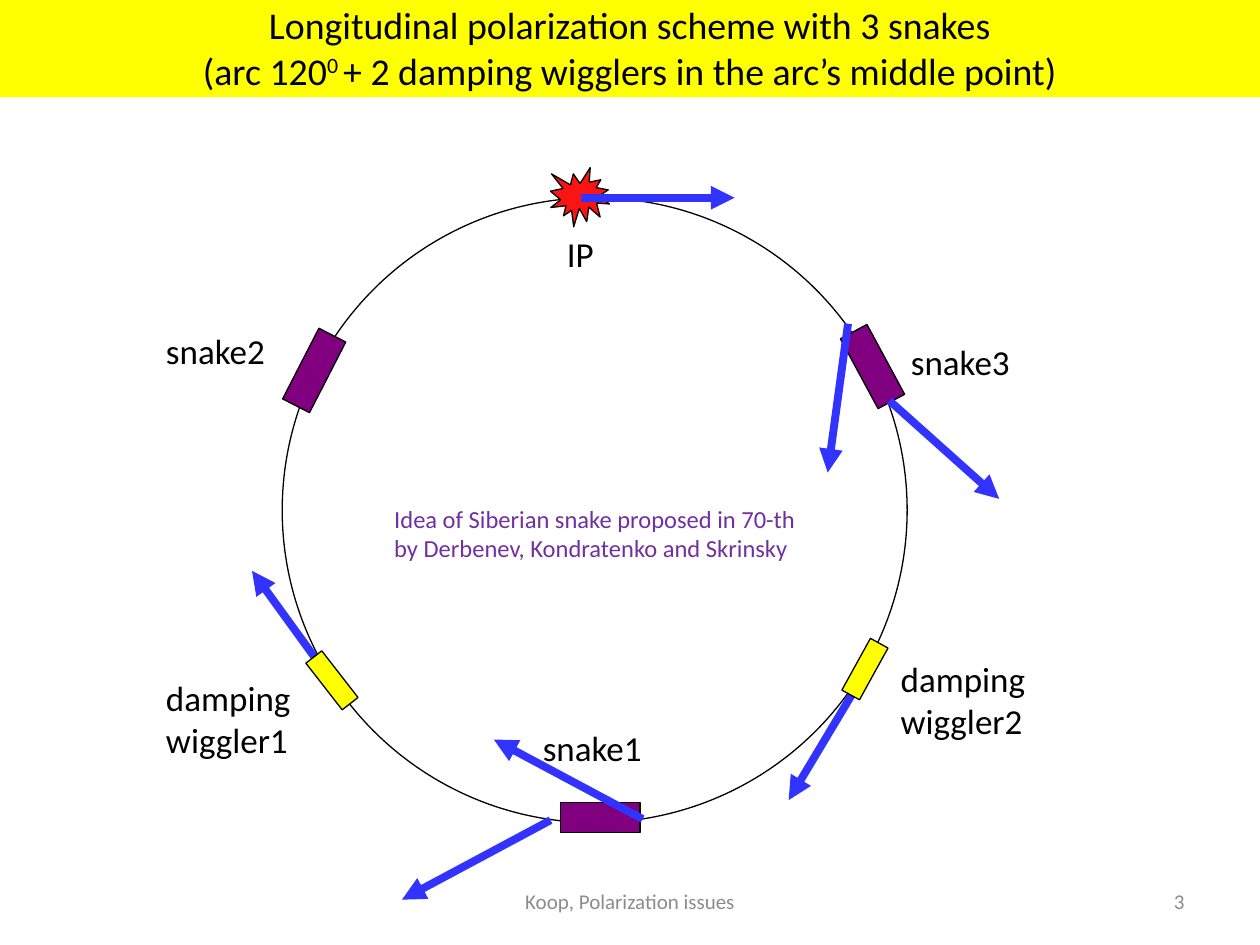
"""Build the slide on longitudinal polarization with three snakes."""
import pptx
import pptx.dml.color
import pptx.enum.shapes
import pptx.enum.text
import pptx.oxml
import pptx.oxml.ns
import pptx.util

Pt = pptx.util.Pt
SHAPES = pptx.enum.shapes.MSO_SHAPE
ALIGN = pptx.enum.text.PP_ALIGN
ANCHOR = pptx.enum.text.MSO_ANCHOR

BLACK, YELLOW, PURPLE, RED = "000000", "FFFF00", "800080", "FA1414"
SPIN_BLUE, NOTE_VIOLET, FOOTER_GREY = "3333FF", "7030A0", "8C8C8C"

TITLE = [
    "Longitudinal polarization scheme with 3 snakes",
    "(arc 120^0 ^+ 2 damping wigglers in the arc’s middle point)",
]
SNAKE_SIZE, WIGGLER_SIZE = (45.4, 17.3), (33.8, 11.5)
SNAKES = [(179.6, 211.7, 297.2), (498.6, 209.5, 61.6), (343.1, 467.3, 0)]
WIGGLERS = [(189.7, 388.8, 52.1), (494.3, 382.3, 298.9)]
SPINS = [
    ((331.9, 113), (419.8, 113)),
    ((367.2, 468), (282.2, 422.6)),
    ((499, 376.6), (450.7, 457.2)),
    ((193, 393.8), (144, 326.2)),
    ((314.6, 468.7), (229.7, 514.1)),
    ((508.3, 229), (571, 285.1)),
    ((484.6, 185), (473, 270)),
]
LABELS = [
    (["IP"], (316.8, 129.6, 33.1, 31)),
    (["snake1"], (303.1, 411.8, 79.2, 31)),
    (["snake2"], (87.8, 185, 79.2, 31)),
    (["snake3"], (513.4, 190.8, 79.2, 31)),
    (["damping", "wiggler1"], (87.8, 383, 91.4, 55.4)),
    (["damping", "wiggler2"], (507.6, 372.2, 91.4, 55.4)),
]
IDEA = [
    "Idea of Siberian snake proposed in 70-th",
    "by Derbenev, Kondratenko and Skrinsky",
]


def color(hex_code):
    return pptx.dml.color.RGBColor.from_string(hex_code)


def write(holder, lines, size=20, ink=BLACK, align=ALIGN.LEFT, anchor=ANCHOR.TOP, wrap=False):
    """Write lines into a shape; text between carets is superscript."""
    frame = holder.text_frame
    frame.word_wrap = wrap
    frame.vertical_anchor = anchor
    for row, line in enumerate(lines):
        paragraph = frame.paragraphs[0] if row == 0 else frame.add_paragraph()
        paragraph.alignment = align
        for part, words in enumerate(line.split("^")):
            run = paragraph.add_run()
            run.text = words
            run.font.name = "Calibri"
            run.font.size = Pt(size)
            run.font.color.rgb = color(ink)
            if part % 2:
                run.font._element.set("baseline", "30000")


def add_text(slide, lines, box, **style):
    write(slide.shapes.add_textbox(*map(Pt, box)), lines, **style)


def add_figure(slide, kind, box, fill, outline=BLACK, angle=0):
    figure = slide.shapes.add_shape(kind, *map(Pt, box))
    figure.shadow.inherit = False
    figure.rotation = angle
    figure.fill.solid()
    figure.fill.fore_color.rgb = color(fill)
    if outline:
        figure.line.color.rgb = color(outline)
        figure.line.width = Pt(0.75)
    else:
        figure.line.fill.background()
    return figure


def add_magnets(slide, places, size, fill):
    width, height = size
    for x, y, angle in places:
        box = (x - width / 2, y - height / 2, width, height)
        add_figure(slide, SHAPES.RECTANGLE, box, fill, angle=angle)


def add_spin(slide, start, end):
    spin = slide.shapes.add_connector(
        pptx.enum.shapes.MSO_CONNECTOR.STRAIGHT, *map(Pt, start + end))
    spin.line.color.rgb = color(SPIN_BLUE)
    spin.line.width = Pt(4.5)
    head = pptx.oxml.parse_xml(
        f'<a:tailEnd {pptx.oxml.ns.nsdecls("a")} type="triangle"/>')
    spin.line._get_or_add_ln().append(head)
    no_shadow = pptx.oxml.parse_xml(f'<a:effectLst {pptx.oxml.ns.nsdecls("a")}/>')
    spin._element.spPr.append(no_shadow)


def main():
    deck = pptx.Presentation()
    deck.slide_width, deck.slide_height = Pt(720), Pt(540)
    slide = deck.slides.add_slide(deck.slide_layouts[6])

    footer = dict(size=12, ink=FOOTER_GREY, anchor=ANCHOR.MIDDLE, wrap=True)
    add_text(slide, ["Koop, Polarization issues"], (246, 500.5, 228, 28.8),
             align=ALIGN.CENTER, **footer)
    add_text(slide, ["3"], (516, 500.5, 168, 28.8), align=ALIGN.RIGHT, **footer)

    banner = add_figure(slide, SHAPES.RECTANGLE, (0, -1.4, 720, 56.9), YELLOW, outline=None)
    write(banner, TITLE, size=21.6, align=ALIGN.CENTER, anchor=ANCHOR.MIDDLE, wrap=True)

    add_figure(slide, SHAPES.OVAL, (161.3, 113, 357.1, 357.1), "FFFFFF")
    add_figure(slide, SHAPES.EXPLOSION1, (314.6, 95.8, 33.8, 33.8), RED)
    add_magnets(slide, SNAKES, SNAKE_SIZE, PURPLE)
    for start, end in SPINS:
        add_spin(slide, start, end)
    add_magnets(slide, WIGGLERS, WIGGLER_SIZE, YELLOW)
    for lines, box in LABELS:
        add_text(slide, lines, box)
    add_text(slide, IDEA, (218.2, 284.4, 249.1, 41), size=14, ink=NOTE_VIOLET)

    deck.save("out.pptx")


if __name__ == "__main__":
    main()
